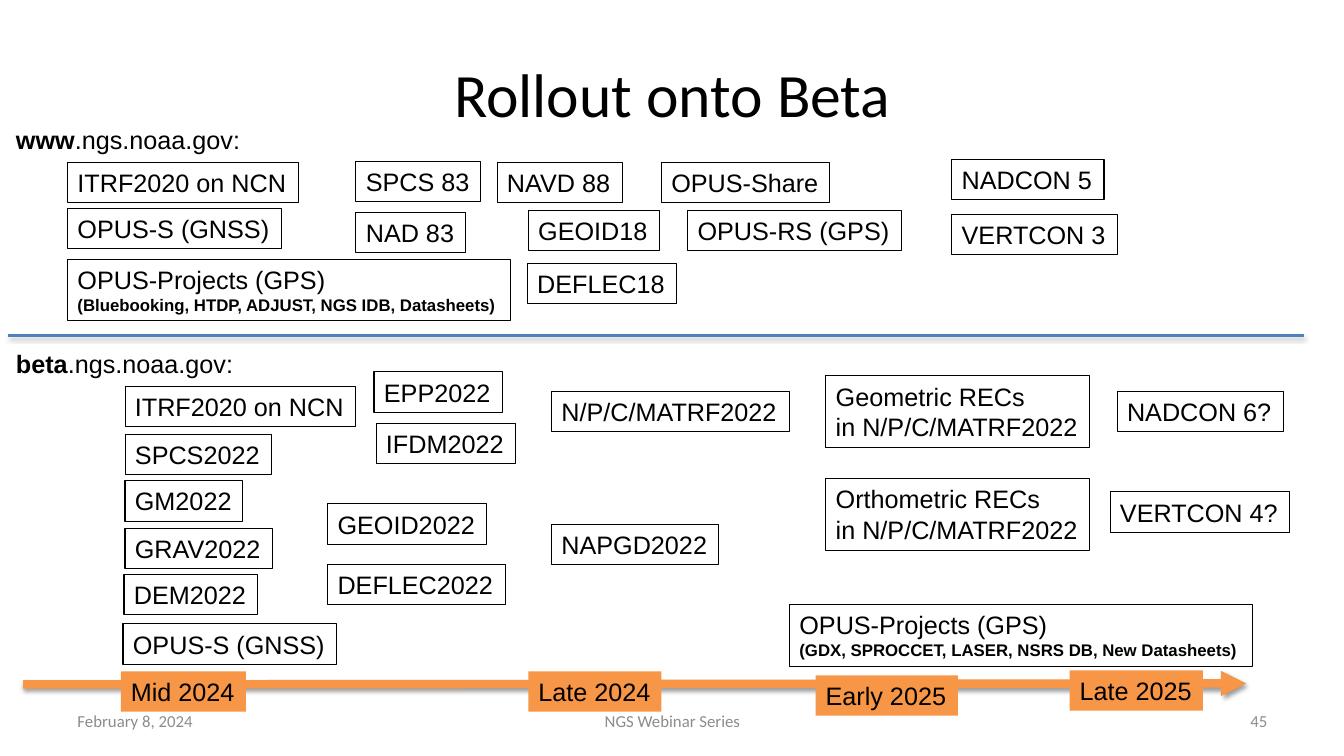
"""Build the slide that shows the beta rollout timeline."""
from lxml.etree import SubElement
from pptx import Presentation
from pptx.dml.color import RGBColor
from pptx.enum.shapes import MSO_CONNECTOR
from pptx.enum.text import MSO_ANCHOR, MSO_AUTO_SIZE, PP_ALIGN
from pptx.oxml import parse_xml
from pptx.oxml.ns import nsdecls, qn
from pptx.util import Inches, Pt

BLACK = RGBColor(0x00, 0x00, 0x00)
WHITE = RGBColor(0xFF, 0xFF, 0xFF)
GRAY = RGBColor(0x8C, 0x8C, 0x8C)
BLUE = RGBColor(0x4F, 0x81, 0xBD)
ORANGE = RGBColor(0xF7, 0x96, 0x46)

LINE_SHADOW = (
    f'<a:effectLst {nsdecls("a")}><a:outerShdw blurRad="39370" dist="20320" '
    'dir="5400000" rotWithShape="0"><a:srgbClr val="000000">'
    '<a:alpha val="38000"/></a:srgbClr></a:outerShdw></a:effectLst>'
)

prs = Presentation()
prs.slide_width = Inches(13.33)
prs.slide_height = Inches(7.5)
slide = prs.slides.add_slide(prs.slide_layouts[6])


def add_text(text, left, top, width, height=0.4, *, lead="", note="", size=18,
             font="Arial", color=BLACK, align=PP_ALIGN.LEFT,
             anchor=MSO_ANCHOR.TOP, wrap=False, fill=None, outline=None):
    box = slide.shapes.add_textbox(
        Inches(left), Inches(top), Inches(width), Inches(height))
    frame = box.text_frame
    frame.word_wrap = wrap
    frame.auto_size = MSO_AUTO_SIZE.NONE if wrap else MSO_AUTO_SIZE.SHAPE_TO_FIT_TEXT
    frame.vertical_anchor = anchor
    if fill is not None:
        box.fill.solid()
        box.fill.fore_color.rgb = fill
    if outline is not None:
        box.line.color.rgb = outline
        box.line.width = Pt(0.75)
    lines = [[(line, size, False)] for line in text.split("\n")]
    if lead:
        lines[0].insert(0, (lead, size, True))
    if note:
        lines.append([(note, 12, True)])
    for index, runs in enumerate(lines):
        paragraph = frame.paragraphs[0] if index == 0 else frame.add_paragraph()
        paragraph.alignment = align
        for words, points, bold in runs:
            run = paragraph.add_run()
            run.text = words
            run.font.name = font
            run.font.size = Pt(points)
            run.font.bold = bold
            run.font.color.rgb = color


def add_line(start, end, color, points):
    line = slide.shapes.add_connector(
        MSO_CONNECTOR.STRAIGHT, *(Inches(value) for value in start + end))
    line.line.color.rgb = color
    line.line.width = Pt(points)
    line._element.spPr.append(parse_xml(LINE_SHADOW))
    return line


add_text("Rollout onto Beta", 0.67, 0.3, 12, 1.25, size=44, font="Calibri",
         align=PP_ALIGN.CENTER, anchor=MSO_ANCHOR.MIDDLE, wrap=True)

footers = [
    ("February 8, 2024", 0.67, 3.11, PP_ALIGN.LEFT),
    ("NGS Webinar Series", 4.56, 4.22, PP_ALIGN.CENTER),
    ("45", 9.56, 3.11, PP_ALIGN.RIGHT),
]
for text, left, width, align in footers:
    add_text(text, left, 6.95, width, size=12, font="Calibri", color=GRAY,
             align=align, anchor=MSO_ANCHOR.MIDDLE, wrap=True)

add_text(".ngs.noaa.gov:", 0.06, 1.18, 2.45, lead="www")
add_text(".ngs.noaa.gov:", 0.06, 3.41, 2.38, lead="beta")
add_line((0.08, 3.33), (12.93, 3.33), BLUE, 2)

www_products = [
    ("ITRF2020 on NCN", 0.67, 1.61, 2.29),
    ("OPUS-S (GNSS)", 0.67, 2.07, 2.12),
    ("SPCS 83", 3.53, 1.6, 1.24),
    ("NAD 83", 3.53, 2.11, 1.09),
    ("NAVD 88", 4.93, 1.61, 1.24),
    ("GEOID18", 5.24, 2.09, 1.3),
    ("DEFLEC18", 5.23, 2.61, 1.48),
    ("OPUS-Share", 6.56, 1.61, 1.67),
    ("OPUS-RS (GPS)", 6.82, 2.09, 2.12),
    ("NADCON 5", 9.44, 1.58, 1.51),
    ("VERTCON 3", 9.44, 2.13, 1.64),
]
beta_products = [
    ("ITRF2020 on NCN", 1.24, 3.83, 2.29),
    ("SPCS2022", 1.24, 4.31, 1.45),
    ("GM2022", 1.24, 4.77, 1.17),
    ("GRAV2022", 1.24, 5.24, 1.46),
    ("DEM2022", 1.23, 5.7, 1.32),
    ("OPUS-S (GNSS)", 1.22, 6.19, 2.12),
    ("EPP2022", 3.71, 3.69, 1.27),
    ("IFDM2022", 3.73, 4.2, 1.38),
    ("GEOID2022", 3.25, 5, 1.58),
    ("DEFLEC2022", 3.25, 5.6, 1.76),
    ("N/P/C/MATRF2022", 5.47, 3.88, 2.36),
    ("NAPGD2022", 5.47, 5.2, 1.66),
    ("Geometric RECs\nin N/P/C/MATRF2022", 8.19, 3.73, 2.62, 0.71),
    ("Orthometric RECs\nin N/P/C/MATRF2022", 8.19, 4.75, 2.62, 0.71),
    ("NADCON 6?", 11.08, 3.88, 1.65),
    ("VERTCON 4?", 11.01, 4.88, 1.78),
]
for product in www_products + beta_products:
    add_text(*product, fill=WHITE, outline=BLACK)

projects = [
    (0.67, 2.57, 4.39, "(Bluebooking, HTDP, ADJUST, NGS IDB, Datasheets)"),
    (7.83, 6, 4.59, "(GDX, SPROCCET, LASER, NSRS DB, New Datasheets)"),
]
for left, top, width, tools in projects:
    add_text("OPUS-Projects (GPS)", left, top, width, 0.61, note=tools,
             fill=WHITE, outline=BLACK)

timeline = add_line((0.23, 6.79), (12.36, 6.78), ORANGE, 6)
SubElement(timeline.line._get_or_add_ln(), qn("a:tailEnd"), type="triangle")

milestones = [
    ("Mid 2024", 1.2, 6.66, 1.24),
    ("Late 2024", 5.24, 6.66, 1.32),
    ("Early 2025", 8.09, 6.7, 1.41),
    ("Late 2025", 10.61, 6.65, 1.32),
]
for milestone in milestones:
    add_text(*milestone, fill=ORANGE)

prs.save("out.pptx")
